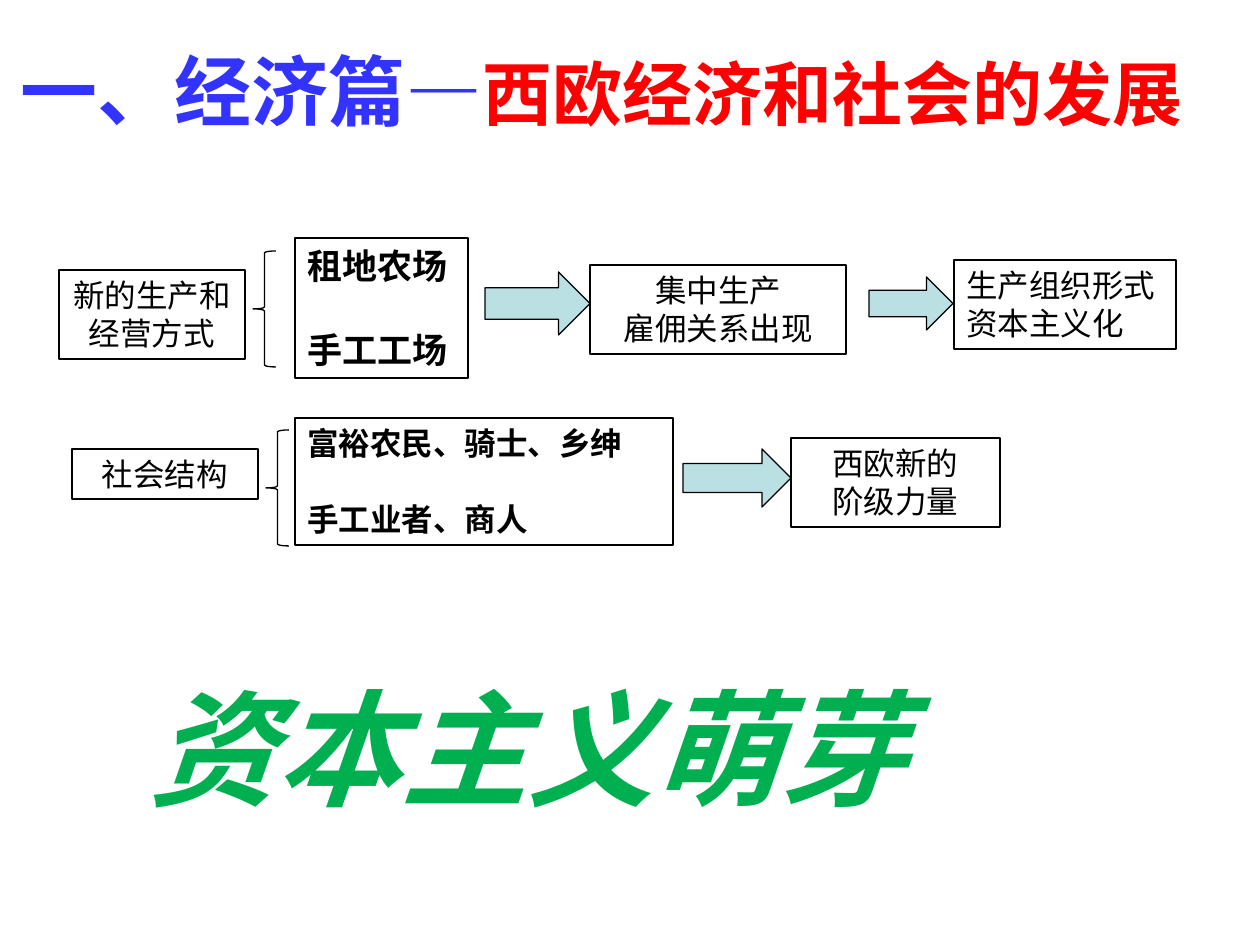
from pptx import Presentation
from pptx.dml.color import RGBColor
from pptx.enum.shapes import MSO_SHAPE as Preset
from pptx.enum.text import MSO_ANCHOR as Anchor, MSO_AUTO_SIZE as AutoSize, PP_ALIGN as Align
from pptx.util import Emu, Pt

EMU_PER_PX = 914400 // 126
LINE_HEIGHT = 1.2
SANS = "Noto Sans CJK SC"


def px(*lengths):
    """Turn pixel lengths into EMU."""
    return [Emu(length * EMU_PER_PX) for length in lengths]


def color(value):
    """Turn a hex string into a colour."""
    return RGBColor.from_string(value)


def add_span(para, text, size=18, font="Arial", ink="000000", bold=False, italic=False):
    """Add one formatted run of text to a paragraph."""
    span = para.add_run()
    span.text = text
    span.font.size = Pt(size)
    span.font.name = font
    span.font.color.rgb = color(ink)
    span.font.bold = bold
    span.font.italic = italic


def write_lines(frame, lines, align=Align.CENTER, gap=0, size=18, **style):
    """Fill a text frame with one paragraph per line."""
    for index, line in enumerate(lines):
        para = frame.add_paragraph() if index else frame.paragraphs[0]
        para.alignment = align
        para.line_spacing = Pt(size * LINE_HEIGHT)
        para.space_before = Pt(gap if index else 0)
        add_span(para, line, size=size, **style)


def add_outline(shapes, preset, place, fill=None):
    """Add a preset shape with a thin black line."""
    shape = shapes.add_shape(preset, *px(*place))
    shape.shadow.inherit = False
    shape.line.color.rgb = color("000000")
    shape.line.width = Pt(0.75)
    if fill:
        shape.fill.solid()
        shape.fill.fore_color.rgb = color(fill)
    else:
        shape.fill.background()
    return shape


def add_box(shapes, place, *lines, **style):
    """Add an outlined box holding lines of text."""
    frame = add_outline(shapes, Preset.RECTANGLE, place).text_frame
    frame.word_wrap = True
    frame.auto_size = AutoSize.SHAPE_TO_FIT_TEXT
    frame.vertical_anchor = Anchor.TOP
    write_lines(frame, lines, **style)


def add_arrow(shapes, *place):
    """Add a pale block arrow pointing right."""
    add_outline(shapes, Preset.RIGHT_ARROW, place, fill="BBE0E3")


def add_brace(shapes, *place):
    """Add a white left brace."""
    add_outline(shapes, Preset.LEFT_BRACE, place, fill="FFFFFF")


def add_title(shapes):
    """Add the two-colour heading."""
    frame = shapes.add_textbox(*px(8, 37, 1257, 203)).text_frame
    frame.word_wrap = True
    para = frame.paragraphs[0]
    para.line_spacing = Pt(44 * LINE_HEIGHT)
    add_span(para, "一、经济篇—", size=44, ink="3333FF", bold=True)
    add_span(para, "西欧经济和社会的发展", size=40, font=SANS, ink="FF0000", bold=True)


def add_production_row(shapes):
    """Add the flow from new production modes to capitalist organisation."""
    add_arrow(shapes, 485, 272, 105, 63)
    add_box(shapes, (295, 238, 173, 140), "租地农场", "手工工场",
            align=Align.LEFT, gap=24, size=20, font=SANS, bold=True)
    add_box(shapes, (59, 270, 186, 89), "新的生产和经营方式")
    add_brace(shapes, 253, 251, 23, 116)
    add_box(shapes, (590, 265, 256, 89), "集中生产", "雇佣关系出现")
    add_arrow(shapes, 869, 277, 84, 53)
    add_box(shapes, (954, 260, 222, 89), "生产组织形式资本主义化", align=Align.LEFT)


def add_society_row(shapes):
    """Add the flow from social structure to new class forces."""
    add_arrow(shapes, 683, 449, 108, 58)
    add_box(shapes, (295, 418, 378, 127), "富裕农民、骑士、乡绅", "手工业者、商人",
            align=Align.LEFT, gap=21.6, font=SANS, bold=True)
    add_box(shapes, (72, 449, 186, 50), "社会结构")
    add_brace(shapes, 266, 430, 23, 116)
    add_box(shapes, (791, 438, 209, 89), "西欧新的", "阶级力量")


def add_conclusion(shapes):
    """Add the large green closing phrase."""
    frame = shapes.add_textbox(*px(136, 664, 784, 165)).text_frame
    frame.word_wrap = False
    frame.auto_size = AutoSize.SHAPE_TO_FIT_TEXT
    write_lines(frame, ["资本主义萌芽"], size=72, ink="00B050", bold=True, italic=True)


def main():
    """Build and save the slide."""
    deck = Presentation()
    deck.slide_width, deck.slide_height = px(1260, 945)
    page = deck.slides.add_slide(deck.slide_layouts[6])
    add_title(page.shapes)
    add_production_row(page.shapes.add_group_shape().shapes)
    add_conclusion(page.shapes)
    add_society_row(page.shapes)
    deck.save("out.pptx")


if __name__ == "__main__":
    main()
